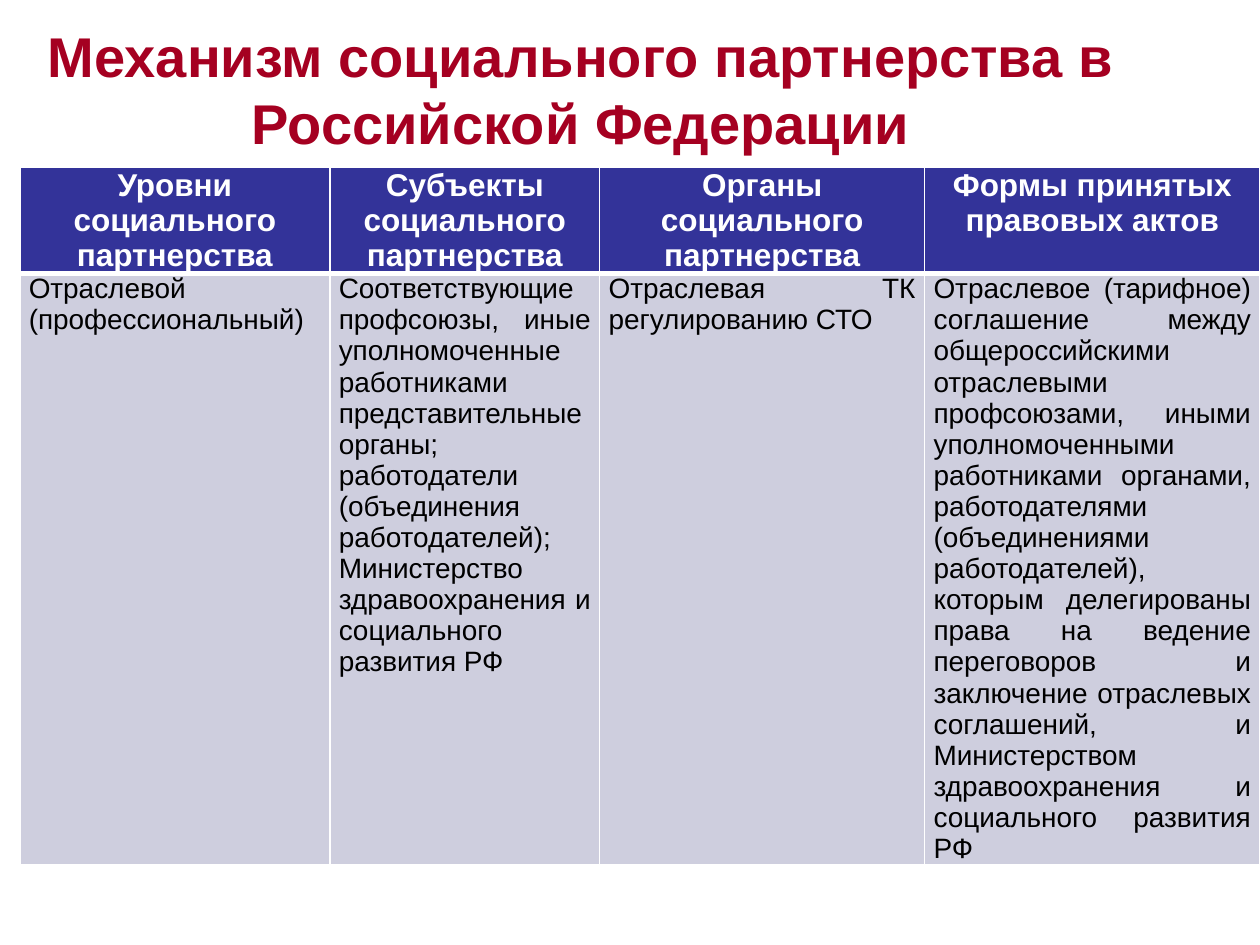
import pptx
import pptx.util
import pptx.dml.color
import pptx.enum.text
import pptx.oxml
import pptx.oxml.ns

Cm, Pt = pptx.util.Cm, pptx.util.Pt
Align = pptx.enum.text.PP_ALIGN
Rgb = pptx.dml.color.RGBColor.from_string

FONT = "Arial"
HUES = {"title": "A50021", "head": "333399", "body": "CECEDE",
        "light": "FFFFFF", "dark": "000000"}

TITLE = "Механизм социального партнерства в Российской Федерации"
HEADS = ["Уровни социального партнерства",
         "Субъекты социального партнерства",
         "Органы социального партнерства",
         "Формы принятых правовых актов"]
BODY = ["Отраслевой (профессиональный)",
        "Соответствующие профсоюзы, иные уполномоченные работниками "
        "представительные органы; работодатели (объединения работодателей); "
        "Министерство здравоохранения и социального развития РФ",
        "Отраслевая ТК регулированию СТО",
        "Отраслевое (тарифное) соглашение между общероссийскими отраслевыми "
        "профсоюзами, иными уполномоченными работниками органами, "
        "работодателями (объединениями работодателей), которым делегированы "
        "права на ведение переговоров и заключение отраслевых соглашений, и "
        "Министерством здравоохранения и социального развития РФ"]
WIDTHS = [6.25, 5.44, 6.55, 6.76]


def style(par, size, hue, bold, align):
    par.alignment = align
    font = par.font
    font.name, font.size, font.bold = FONT, Pt(size), bold
    font.color.rgb = Rgb(HUES[hue])


def edge(cell, side, width):
    line = pptx.oxml.parse_xml(
        f'<a:ln{side} {pptx.oxml.ns.nsdecls("a")} w="{Pt(width)}">'
        f'<a:solidFill><a:srgbClr val="{HUES["light"]}"/></a:solidFill>'
        f'</a:ln{side}>')
    cell._tc.get_or_add_tcPr().append(line)


def add_title(slide, left, top, width, height):
    title = slide.shapes.title
    title.left, title.top = Cm(left), Cm(top)
    title.width, title.height = Cm(width), Cm(height)
    frame = title.text_frame
    frame.text = TITLE
    frame.word_wrap = True
    frame.auto_size = pptx.enum.text.MSO_AUTO_SIZE.NONE
    frame.vertical_anchor = pptx.enum.text.MSO_ANCHOR.MIDDLE
    style(frame.paragraphs[0], 32, "title", True, Align.CENTER)


def fill_cell(cell, text, head, rule):
    cell.margin_left = cell.margin_right = Cm(0.18)
    cell.margin_top = cell.margin_bottom = 0
    for side, width in zip("LRTB", (1, 1, rule[0], rule[1])):
        edge(cell, side, width)
    cell.fill.solid()
    cell.fill.fore_color.rgb = Rgb(HUES["head" if head else "body"])
    cell.text = text
    par = cell.text_frame.paragraphs[0]
    if head:
        style(par, 18, "light", True, Align.CENTER)
    else:
        style(par, 16, "dark", False, Align.JUSTIFY)


def add_grid(slide, left, top, height):
    shape = slide.shapes.add_table(2, len(WIDTHS), Cm(left), Cm(top),
                                   Cm(sum(WIDTHS)), Cm(height))
    table = shape.table
    for col, width in zip(table.columns, WIDTHS):
        col.width = Cm(width)
    # Rows start low and grow with their text
    for row in table.rows:
        row.height = Cm(1.04)
    shape.height = Cm(height)
    # A thick rule parts the header from the body
    for r, (texts, rule) in enumerate([(HEADS, (1, 3)), (BODY, (3, 1))]):
        for c, text in enumerate(texts):
            fill_cell(table.cell(r, c), text, r == 0, rule)


def main():
    deck = pptx.Presentation()
    deck.slide_width, deck.slide_height = Cm(25.4), Cm(19.05)
    slide = deck.slides.add_slide(deck.slide_layouts[5])
    add_title(slide, 0, 0.58, 23.42, 2.41)
    add_grid(slide, 0.4, 3.38, 15.16)
    deck.save("out.pptx")


if __name__ == "__main__":
    main()
